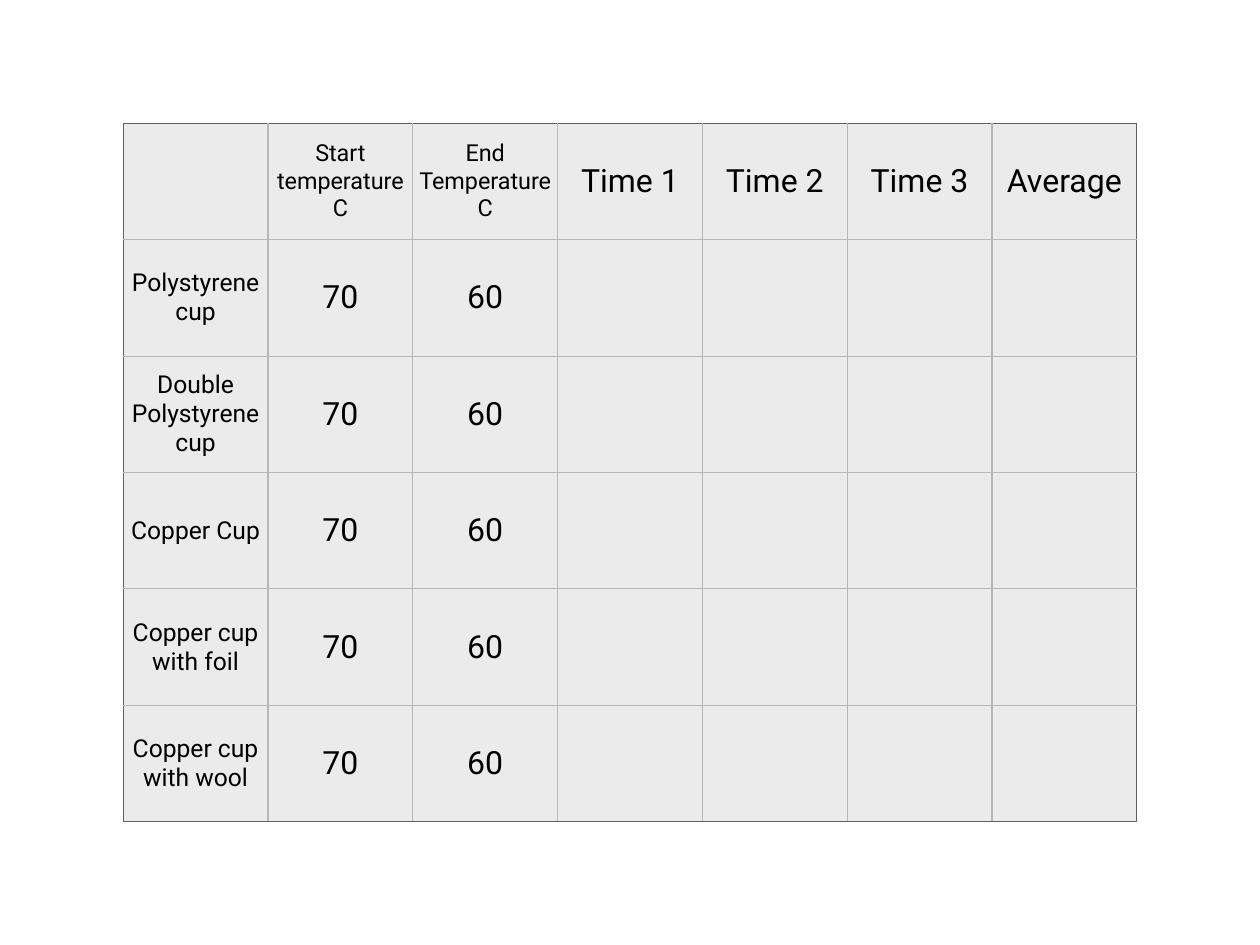
import dataclasses

import pptx
import pptx.dml.color
import pptx.enum.text
import pptx.oxml
import pptx.oxml.ns
import pptx.util


@dataclasses.dataclass(frozen=True)
class Theme:
    font: str = "Roboto"
    text: str = "000000"
    cell: str = "EBEBEB"
    grid: str = "B8B8B8"
    frame: str = "606060"
    border_width: float = 1
    column_label_size: int = 19
    row_label_size: int = 20
    value_size: int = 26


THEME = Theme()
HEADINGS = ["", "Start temperature C", "End Temperature C",
            "Time 1", "Time 2", "Time 3", "Average"]
CUPS = ["Polystyrene cup", "Double Polystyrene cup", "Copper Cup",
        "Copper cup with foil", "Copper cup with wool"]
START_TEMPERATURE, END_TEMPERATURE = "70", "60"


def set_borders(cell, colors):
    properties = cell._tc.get_or_add_tcPr()
    width = pptx.util.Pt(THEME.border_width)
    for position, (side, color) in enumerate(colors.items()):
        border = pptx.oxml.parse_xml(
            f'<a:{side} {pptx.oxml.ns.nsdecls("a")} w="{width}">'
            f'<a:solidFill><a:srgbClr val="{color}"/></a:solidFill></a:{side}>')
        properties.insert(position, border)


def format_cell(cell, text, size):
    cell.fill.solid()
    cell.fill.fore_color.rgb = pptx.dml.color.RGBColor.from_string(THEME.cell)
    cell.vertical_anchor = pptx.enum.text.MSO_ANCHOR.MIDDLE
    cell.margin_left = cell.margin_right = pptx.util.Inches(0.06)
    cell.margin_top = cell.margin_bottom = pptx.util.Inches(0.06)
    cell.text_frame.text = text
    paragraph = cell.text_frame.paragraphs[0]
    paragraph.alignment = pptx.enum.text.PP_ALIGN.CENTER
    for run in paragraph.runs:
        run.font.name = THEME.font
        run.font.size = pptx.util.Pt(size)
        run.font.color.rgb = pptx.dml.color.RGBColor.from_string(THEME.text)


def text_size(row, column):
    if column == 0:
        return THEME.row_label_size
    if row == 0 and column <= 2:
        return THEME.column_label_size
    return THEME.value_size


def add_results_table(slide, left, top, width, height):
    blanks = [""] * (len(HEADINGS) - 3)
    rows = [HEADINGS] + [[cup, START_TEMPERATURE, END_TEMPERATURE] + blanks
                         for cup in CUPS]
    last_row, last_column = len(rows) - 1, len(HEADINGS) - 1
    table = slide.shapes.add_table(
        len(rows), len(HEADINGS), left, top, width, height).table
    table.first_row = table.horz_banding = False
    for row, texts in enumerate(rows):
        for column, text in enumerate(texts):
            cell = table.cell(row, column)
            format_cell(cell, text, text_size(row, column))
            outer = {"lnL": column == 0, "lnR": column == last_column,
                     "lnT": row == 0, "lnB": row == last_row}
            set_borders(cell, {side: THEME.frame if is_outer else THEME.grid
                               for side, is_outer in outer.items()})


def main():
    presentation = pptx.Presentation()
    presentation.slide_width = pptx.util.Inches(14.22)
    presentation.slide_height = pptx.util.Inches(10.67)
    slide = presentation.slides.add_slide(presentation.slide_layouts[6])
    add_results_table(slide, pptx.util.Inches(1.39), pptx.util.Inches(1.39),
                      pptx.util.Inches(11.44), pptx.util.Inches(7.89))
    presentation.save("out.pptx")


if __name__ == "__main__":
    main()
